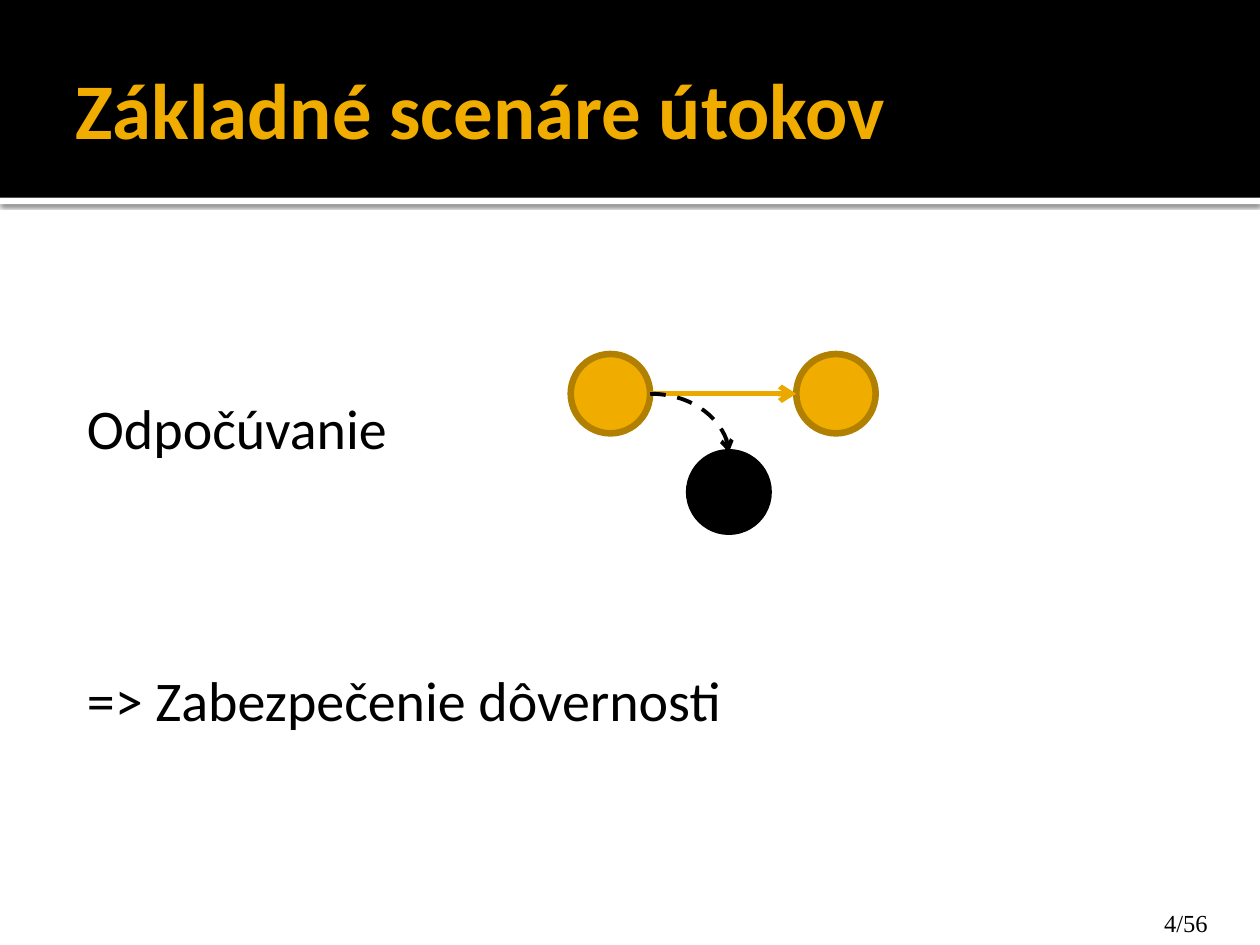
from lxml.etree import SubElement
from pptx import Presentation
from pptx.dml.color import RGBColor
from pptx.enum.dml import MSO_LINE_DASH_STYLE as Dash
from pptx.enum.shapes import MSO_CONNECTOR as Connector, MSO_SHAPE as Shape
from pptx.enum.text import MSO_ANCHOR as Anchor, PP_ALIGN as Align
from pptx.oxml import parse_xml
from pptx.oxml.ns import nsdecls, qn
from pptx.util import Inches, Pt

BLACK = RGBColor(0x00, 0x00, 0x00)
WHITE = RGBColor(0xFF, 0xFF, 0xFF)
AMBER = RGBColor(0xF0, 0xAD, 0x00)
DARK_AMBER = RGBColor(0xB2, 0x80, 0x00)
ARROW_AMBER = RGBColor(0xEB, 0xA9, 0x00)

TITLE = "Základné scenáre útokov"
ATTACK = "Odpočúvanie"
DEFENCE = "=> Zabezpečenie dôvernosti"
PAGE = "4/56"

NODE_SIZE = 0.63
# left, top, fill, outline
SENDER = (4.53, 2.81, AMBER, DARK_AMBER)
RECEIVER = (6.32, 2.81, AMBER, DARK_AMBER)
EAVESDROPPER = (5.47, 3.59, BLACK, BLACK)

BODY_SIZE = 32
LINE_HEIGHT = BODY_SIZE * 1.22  # points, single-spaced Calibri


def place(shape, left, top, width, height):
    shape.left, shape.top = Inches(left), Inches(top)
    shape.width, shape.height = Inches(width), Inches(height)


def set_insets(frame, left, top, right, bottom):
    frame.margin_left, frame.margin_top = Inches(left), Inches(top)
    frame.margin_right, frame.margin_bottom = Inches(right), Inches(bottom)


def write(paragraph, text, size, color=BLACK, font="Calibri", bold=False,
          indent=0, before=0):
    paragraph.alignment = Align.LEFT
    paragraph.space_before = Pt(before)
    properties = paragraph._p.get_or_add_pPr()
    properties.set("marL", str(Inches(indent)))
    properties.set("indent", "0")
    SubElement(properties, qn("a:buNone"))
    run = paragraph.add_run()
    run.text = text
    run.font.name, run.font.size, run.font.bold = font, Pt(size), bold
    run.font.color.rgb = color


def add_band(slide, top, height, color):
    """Add a full-width band behind everything else."""
    band = slide.shapes.add_shape(Shape.RECTANGLE, 0, Inches(top),
                                  Inches(10), Inches(height))
    band.shadow.inherit = False
    band.fill.solid()
    band.fill.fore_color.rgb = color
    band.line.fill.background()
    slide.shapes._spTree.insert(2, band._element)
    return band


def add_node(shapes, left, top, fill, outline):
    node = shapes.add_shape(Shape.OVAL, Inches(left), Inches(top),
                            Inches(NODE_SIZE), Inches(NODE_SIZE))
    node.shadow.inherit = False
    node.fill.solid()
    node.fill.fore_color.rgb = fill
    node.line.color.rgb = outline
    node.line.width = Pt(3.78)


def add_arrow(shapes, kind, start, end, color, width):
    arrow = shapes.add_connector(kind, *map(Inches, start + end))
    arrow.line.color.rgb = color
    arrow.line.width = Pt(width)
    SubElement(arrow.line._get_or_add_ln(), qn("a:tailEnd"), type="arrow")
    SubElement(arrow._element.spPr, qn("a:effectLst"))
    return arrow


presentation = Presentation()
presentation.slide_width, presentation.slide_height = Inches(10), Inches(7.5)
slide = presentation.slides.add_slide(presentation.slide_layouts[1])

add_band(slide, 0, 1.57, BLACK)
divider = add_band(slide, 1.57, 0.05, WHITE)
divider._element.spPr.remove(divider._element.spPr.find(qn("a:effectLst")))
divider._element.spPr.append(parse_xml(
    f'<a:effectLst {nsdecls("a")}><a:outerShdw blurRad="{Pt(2.5)}" '
    f'dist="{Pt(0.8)}" dir="5400000" rotWithShape="0"><a:srgbClr val="{BLACK}">'
    '<a:alpha val="60000"/></a:srgbClr></a:outerShdw></a:effectLst>'))

title, body = slide.placeholders
place(title, 0.5, 0.17, 9, 1.37)
set_insets(title.text_frame, 0.1, 0.05, 0.05, 0.05)
title.text_frame.vertical_anchor = Anchor.MIDDLE
write(title.text_frame.paragraphs[0], TITLE, 45, color=AMBER, bold=True)

# The attack starts two lines down; the defence follows after a three-line gap.
place(body, 0.5, 1.94, 9, 5.06)
set_insets(body.text_frame, 0.06, 0.1 + 2 * LINE_HEIGHT / 72, 0.1, 0.05)
body.text_frame.vertical_anchor = Anchor.TOP
write(body.text_frame.paragraphs[0], ATTACK, BODY_SIZE, indent=0.13)
write(body.text_frame.add_paragraph(), DEFENCE, BODY_SIZE, indent=0.13,
      before=3 * LINE_HEIGHT)

page_box = slide.shapes.add_textbox(Inches(9.14), Inches(7.16),
                                    Inches(0.86), Inches(0.34))
page_box.text_frame.word_wrap = True
write(page_box.text_frame.paragraphs[0], PAGE, 14, font="Times New Roman")

diagram = slide.shapes.add_group_shape().shapes
middle = SENDER[1] + NODE_SIZE / 2
tap_start = (SENDER[0] + NODE_SIZE, middle)
tap_end = (EAVESDROPPER[0] + NODE_SIZE / 2, EAVESDROPPER[1])
add_node(diagram, *SENDER)
add_node(diagram, *RECEIVER)
add_arrow(diagram, Connector.STRAIGHT, tap_start, (RECEIVER[0], middle),
          ARROW_AMBER, 3)
add_node(diagram, *EAVESDROPPER)
tap = add_arrow(diagram, Connector.CURVE, tap_start, tap_end, BLACK, 2.25)
tap.line.dash_style = Dash.DASH
tap._element.spPr.find(qn("a:prstGeom")).set("prst", "curvedConnector2")

presentation.save("out.pptx")
